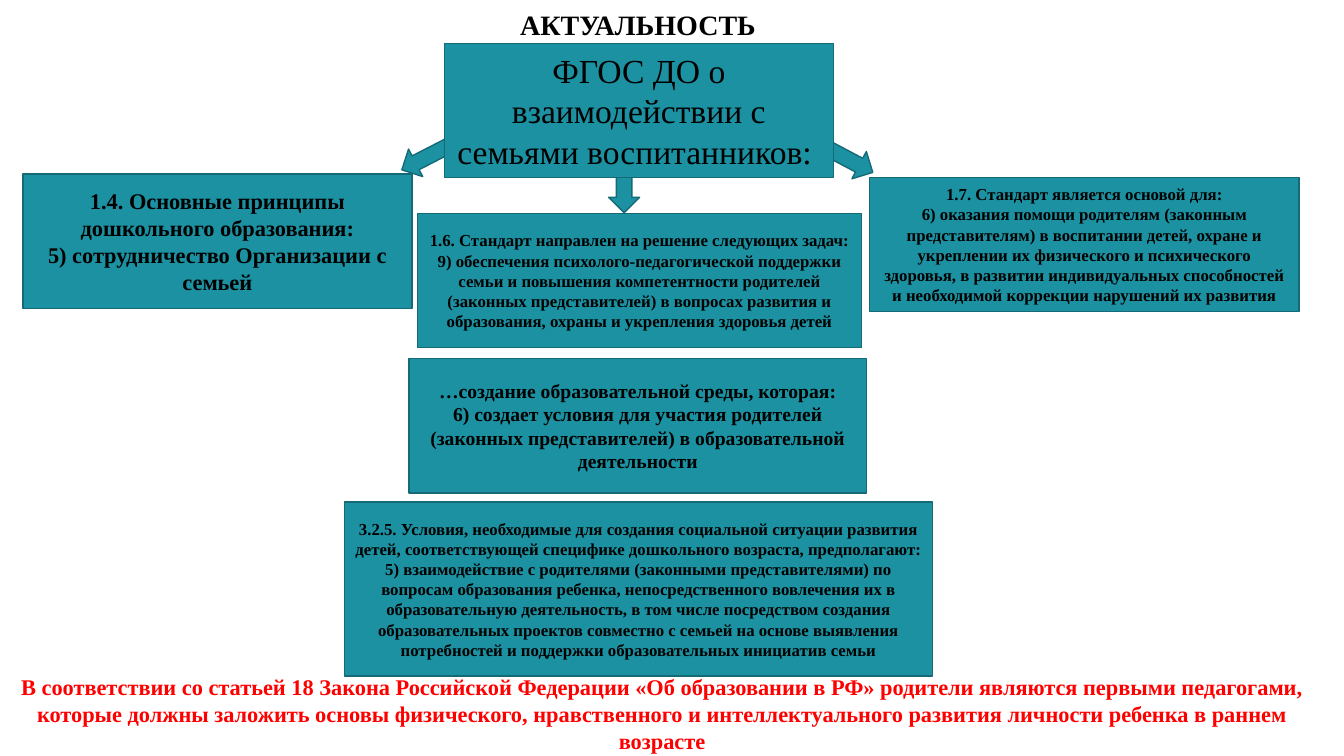
from pptx import Presentation
from pptx.dml.color import RGBColor
from pptx.enum.shapes import MSO_SHAPE as SHAPE
from pptx.enum.text import MSO_ANCHOR as ANCHOR, MSO_AUTO_SIZE as AUTOSIZE, PP_ALIGN as ALIGN
from pptx.util import Cm, Pt

COLORS = {"teal": "1B91A1", "edge": "146B77", "text": "000000", "accent": "FF0000"}
FONT = "Times New Roman"
BOX_H = 3.38

# Each block: box (left, top, width, height) in cm, font size, paragraphs
BLOCKS = [
    ((0.58, 4.39, 9.8, BOX_H), 16, [
        "1.4. Основные принципы дошкольного образования:",
        "5) сотрудничество Организации с семьей"]),
    ((10.52, 5.38, 11.2, BOX_H), 12, [
        "1.6. Стандарт направлен на решение следующих задач:",
        "9) обеспечения психолого-педагогической поддержки семьи и повышения "
        "компетентности родителей (законных представителей) в вопросах развития "
        "и образования, охраны и укрепления здоровья детей"]),
    ((21.92, 4.47, 10.82, BOX_H), 12, [
        "1.7. Стандарт является основой для:",
        "6) оказания помощи родителям (законным представителям) в воспитании детей, "
        "охране и укреплении их физического и психического здоровья, в развитии "
        "индивидуальных способностей и необходимой коррекции нарушений их развития"]),
    ((10.31, 9.04, 11.53, BOX_H), 14, [
        "…создание образовательной среды, которая:",
        "6) создает условия для участия родителей (законных представителей) "
        "в образовательной деятельности"]),
    ((8.69, 12.65, 14.81, 4.39), 12, [
        "3.2.5. Условия, необходимые для создания социальной ситуации развития детей, "
        "соответствующей специфике дошкольного возраста, предполагают:",
        "5) взаимодействие с родителями (законными представителями) по вопросам "
        "образования ребенка, непосредственного вовлечения их в образовательную "
        "деятельность, в том числе посредством создания образовательных проектов "
        "совместно с семьей на основе выявления потребностей и поддержки "
        "образовательных инициатив семьи"]),
]


def rgb(name):
    return RGBColor.from_string(COLORS[name])


def write(tf, paragraphs, size, bold=True, color="text", anchor=ANCHOR.MIDDLE,
          wrap=True, spacing=1.0):
    tf.word_wrap = wrap
    tf.vertical_anchor = anchor
    for i, text in enumerate(paragraphs):
        p = tf.paragraphs[0] if i == 0 else tf.add_paragraph()
        p.alignment = ALIGN.CENTER
        p.line_spacing = spacing
        r = p.add_run()
        r.text = text
        r.font.name = FONT
        r.font.size = Pt(size)
        r.font.bold = bold
        r.font.color.rgb = rgb(color)


def add_teal_shape(slide, kind, box, rotation=0):
    sp = slide.shapes.add_shape(kind, *map(Cm, box))
    sp.rotation = rotation
    sp.shadow.inherit = False
    sp.fill.solid()
    sp.fill.fore_color.rgb = rgb("teal")
    sp.line.color.rgb = rgb("edge")
    sp.line.width = Pt(1)
    return sp


def add_block(slide, box, size, paragraphs, bold=True):
    sp = add_teal_shape(slide, SHAPE.RECTANGLE, box)
    write(sp.text_frame, paragraphs, size, bold)


def add_title(slide, box):
    sp = slide.shapes.title
    sp.left, sp.top, sp.width, sp.height = map(Cm, box)
    write(sp.text_frame, ["АКТУАЛЬНОСТЬ"], 20, anchor=ANCHOR.TOP, wrap=False, spacing=0.9)
    sp.text_frame.auto_size = AUTOSIZE.NONE


def add_source_block(slide, box):
    """Head block with the three arrows that leave its lower edge."""
    left, top, width, _ = box
    for dx, dy, rotation in [(4.14, 1.88, 0), (width - 0.45, 1.5, 297.9), (-0.4, 1.45, 62.8)]:
        add_teal_shape(slide, SHAPE.DOWN_ARROW, (left + dx, top + dy, 0.78, 2.39), rotation)
    add_block(slide, box, 24, ["ФГОС ДО о взаимодействии с семьями воспитанников: "], bold=False)


def add_conclusion(slide, box):
    sp = slide.shapes.add_textbox(*map(Cm, box))
    write(sp.text_frame, [
        "В соответствии со статьей 18 Закона Российской Федерации «Об образовании в РФ» "
        "родители являются первыми педагогами, которые должны заложить основы физического, "
        "нравственного и интеллектуального развития личности ребенка в раннем возрасте"],
        16, color="accent", anchor=ANCHOR.TOP)


def main():
    prs = Presentation()
    prs.slide_width, prs.slide_height = Cm(33.87), Cm(19.05)
    slide = prs.slides.add_slide(prs.slide_layouts[5])
    add_title(slide, (12.83, 0.15, 6.5, 1.02))
    add_source_block(slide, (11.2, 1.09, 9.8, BOX_H))
    for box, size, paragraphs in BLOCKS:
        add_block(slide, box, size, paragraphs)
    add_conclusion(slide, (-0.08, 16.84, 33.53, 2.31))
    prs.save("out.pptx")


if __name__ == "__main__":
    main()
